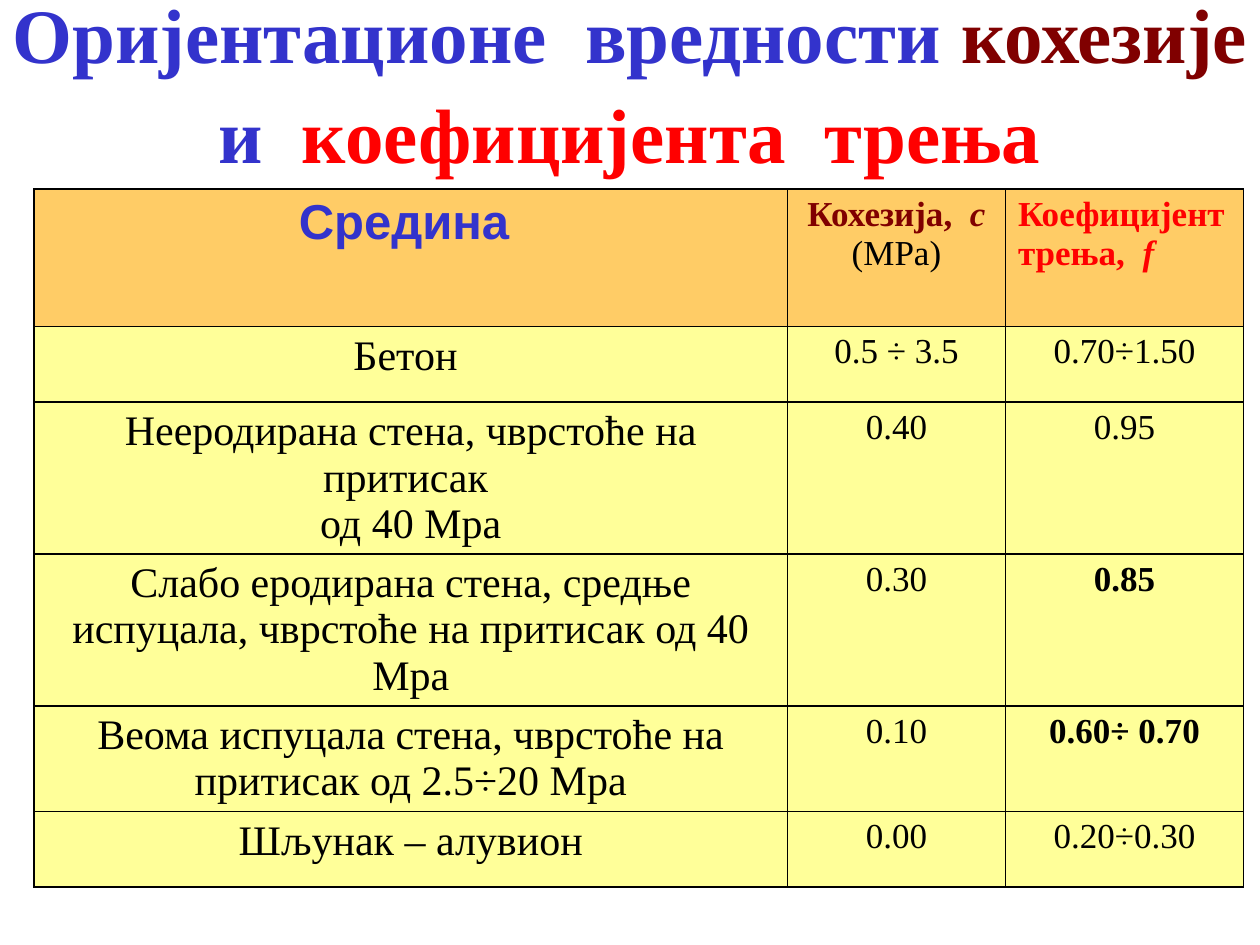
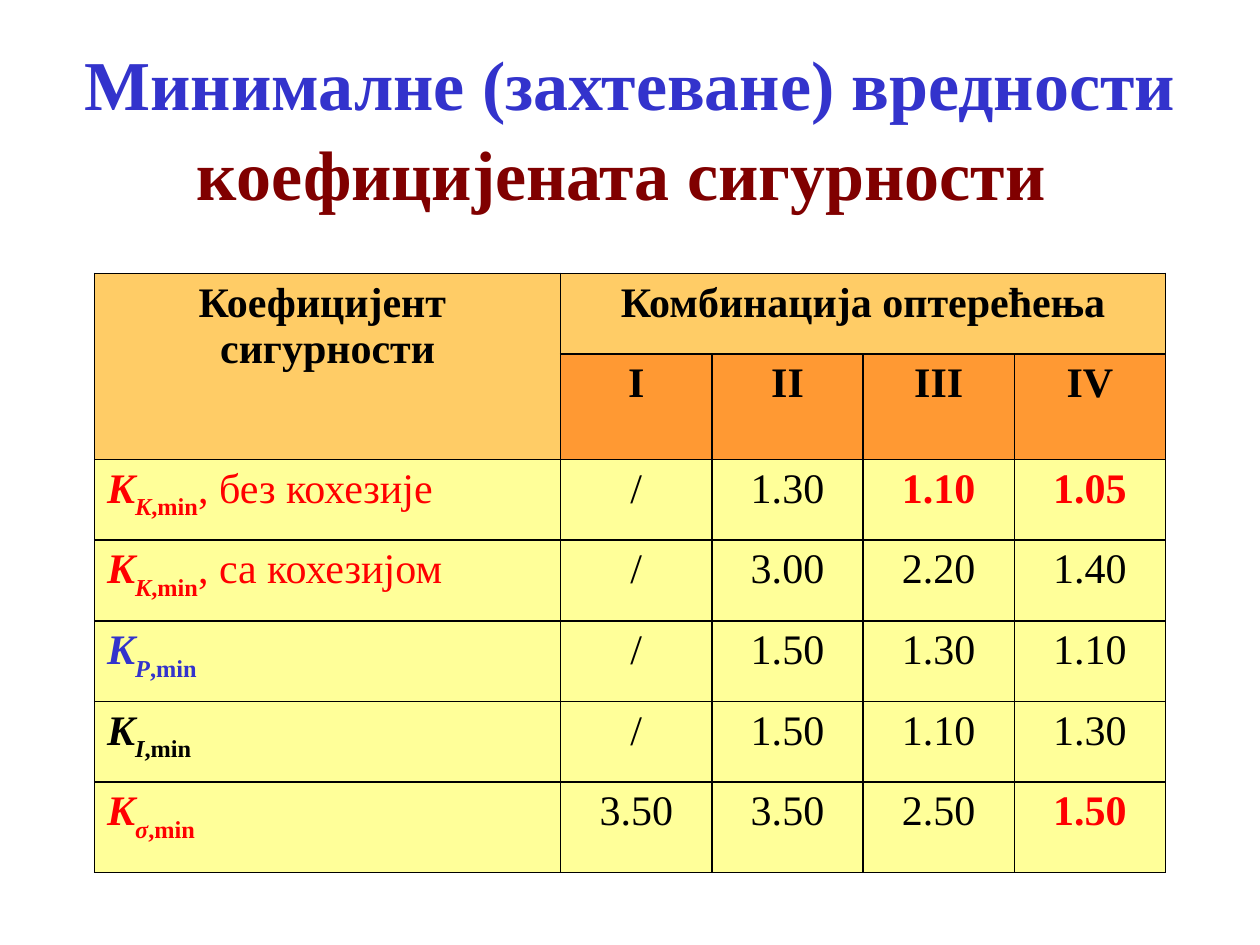
import dataclasses

import pptx
import pptx.dml.color
import pptx.enum.text
import pptx.oxml
import pptx.oxml.ns
import pptx.util

Inches = pptx.util.Inches
Pt = pptx.util.Pt
RGBColor = pptx.dml.color.RGBColor
Align = pptx.enum.text.PP_ALIGN

BLUE = RGBColor(0x33, 0x33, 0xCC)
MAROON = RGBColor(0x80, 0x00, 0x00)
RED = RGBColor(0xFF, 0x00, 0x00)
BLACK = RGBColor(0x00, 0x00, 0x00)
HEADER = RGBColor(0xFF, 0xCC, 0x66)
SUBHEADER = RGBColor(0xFF, 0x99, 0x33)
BODY = RGBColor(0xFF, 0xFF, 0x99)
SERIF = "Times New Roman"
TITLE_ONLY = 5


@dataclasses.dataclass
class Span:
    text: str
    color: RGBColor = BLACK
    bold: bool = False
    italic: bool = False
    subscript: bool = False
    font: str = SERIF


def add_span(para, span, size):
    for number, line in enumerate(span.text.split("\n")):
        if number:
            para.add_line_break()
        run = para.add_run()
        run.text = line
        run.font.name = span.font
        run.font.size = Pt(size)
        run.font.bold = span.bold
        run.font.italic = span.italic
        run.font.color.rgb = span.color
        if span.subscript:
            run._r.get_or_add_rPr().set("baseline", "-30000")


def add_title_page(deck, top, size, spans):
    page = deck.slides.add_slide(deck.slide_layouts[TITLE_ONLY])
    title = page.shapes.title
    title.left, title.top = Inches(0), Inches(top)
    title.width, title.height = deck.slide_width, Inches(1.25)
    frame = title.text_frame
    frame.word_wrap = True
    frame.auto_size = pptx.enum.text.MSO_AUTO_SIZE.NONE
    frame.vertical_anchor = pptx.enum.text.MSO_ANCHOR.MIDDLE
    para = frame.paragraphs[0]
    para.alignment = Align.CENTER
    para.line_spacing = 1.08
    for span in spans:
        add_span(para, span, size)
    return page


def add_borders(cell):
    properties = cell._tc.get_or_add_tcPr()
    namespace = pptx.oxml.ns.nsdecls("a")
    for position, side in enumerate(("lnL", "lnR", "lnT", "lnB")):
        line = pptx.oxml.parse_xml(
            f'<a:{side} {namespace} w="12700"><a:solidFill>'
            f'<a:srgbClr val="{BLACK}"/></a:solidFill></a:{side}>'
        )
        properties.insert(position, line)


def add_grid(page, left, top, widths, heights):
    frame = page.shapes.add_table(
        len(heights), len(widths), Inches(left), Inches(top),
        Inches(sum(widths)), Inches(sum(heights)),
    )
    table = frame.table
    table.first_row = False
    table.horz_banding = False
    for column, width in zip(table.columns, widths):
        column.width = Inches(width)
    for row, height in zip(table.rows, heights):
        row.height = Inches(height)
    for cell in table.iter_cells():
        cell.fill.solid()
        cell.fill.fore_color.rgb = BODY
        add_borders(cell)
    return table


def fill_cell(cell, size, *lines, align=Align.CENTER, fill=BODY):
    cell.fill.fore_color.rgb = fill
    frame = cell.text_frame
    for number, spans in enumerate(lines):
        para = frame.add_paragraph() if number else frame.paragraphs[0]
        para.alignment = align
        for span in spans:
            add_span(para, span, size)


def build_cohesion_page(deck):
    page = add_title_page(deck, 0, 44, [
        Span("Оријентационе  вредности ", BLUE, True),
        Span("кохезије ", MAROON, True),
        Span(" и  ", BLUE, True),
        Span("коефицијента  трења ", RED, True),
    ])
    table = add_grid(page, 0.27, 1.5, [5.98, 1.73, 1.89],
                     [1.09, 0.6, 1, 0.6, 0.6, 0.6])
    fill_cell(table.cell(0, 0), 28,
              [Span("Средина ", BLUE, True, font="Arial")], fill=HEADER)
    fill_cell(table.cell(0, 1), 20,
              [Span("Кохезија,  ", MAROON, True), Span("c", MAROON, True, True)],
              [Span("(MPa)")], fill=HEADER)
    fill_cell(table.cell(0, 2), 20,
              [Span("Коефицијент трења,  ", RED, True), Span("f", RED, True, True)],
              align=Align.LEFT, fill=HEADER)
    grounds = [
        ("Бетон ", "0.5 ÷ 3.5", "0.70÷1.50", False),
        ("Нееродирана стена, чврстоће на притисак \nод 40 Mpa", "0.40", "0.95", False),
        ("Слабо еродирана стена, средње испуцала, чврстоће на притисак од 40 Mpa",
         "0.30", "0.85", True),
        ("Веома испуцала стена, чврстоће на притисак од 2.5÷20 Mpa",
         "0.10", "0.60÷ 0.70", True),
        ("Шљунак – алувион", "0.00", "0.20÷0.30", False),
    ]
    for row, (ground, cohesion, friction, bold) in enumerate(grounds, 1):
        fill_cell(table.cell(row, 0), 24, [Span(ground)])
        fill_cell(table.cell(row, 1), 20, [Span(cohesion)])
        fill_cell(table.cell(row, 2), 20, [Span(friction, bold=bold)])


def factor_spans(index, color, note):
    spans = [
        Span("K", color, True, True),
        Span(index, color, True, True, True),
        Span(",min", color, True, False, True),
    ]
    return spans + [Span(note, color)] if note else spans


def build_safety_page(deck):
    page = add_title_page(deck, 0.36, 40, [
        Span("Минималне (захтеване) вредности ", BLUE, True),
        Span("коефицијената сигурности ", MAROON, True),
    ])
    table = add_grid(page, 0.75, 2.17, [3.7] + [1.2] * 4, [0.64] * 6 + [0.72])
    table.cell(0, 0).merge(table.cell(1, 0))
    table.cell(0, 1).merge(table.cell(0, 4))
    fill_cell(table.cell(0, 0), 24, [Span("Коефицијент ", bold=True)],
              [Span("сигурности", bold=True)], fill=HEADER)
    fill_cell(table.cell(0, 1), 24,
              [Span("Комбинација оптерећења", bold=True)], fill=HEADER)
    for column, load in enumerate(("I", "II", "III", "IV"), 1):
        fill_cell(table.cell(1, column), 24, [Span(load, bold=True)], fill=SUBHEADER)
    factors = [
        ("K", RED, ", без кохезије", (" / ", "1.30", "1.10", "1.05"), (3, 4)),
        ("K", RED, ", са кохезијом", ("/", "3.00", "2.20", "1.40"), ()),
        ("P", BLUE, "", ("/", "1.50", "1.30", "1.10"), ()),
        ("I", BLACK, "", ("/", "1.50", "1.10", "1.30"), ()),
        ("σ", RED, "", ("3.50", "3.50", "2.50", "1.50"), (4,)),
    ]
    for row, (index, color, note, values, critical) in enumerate(factors, 2):
        fill_cell(table.cell(row, 0), 24, factor_spans(index, color, note),
                  align=Align.JUSTIFY)
        for column, value in enumerate(values, 1):
            marked = column in critical
            fill_cell(table.cell(row, column), 24,
                      [Span(value, RED if marked else BLACK, marked)])


def main():
    deck = pptx.Presentation()
    deck.slide_width = Inches(10)
    deck.slide_height = Inches(7.5)
    build_cohesion_page(deck)
    build_safety_page(deck)
    deck.save("out.pptx")


if __name__ == "__main__":
    main()
